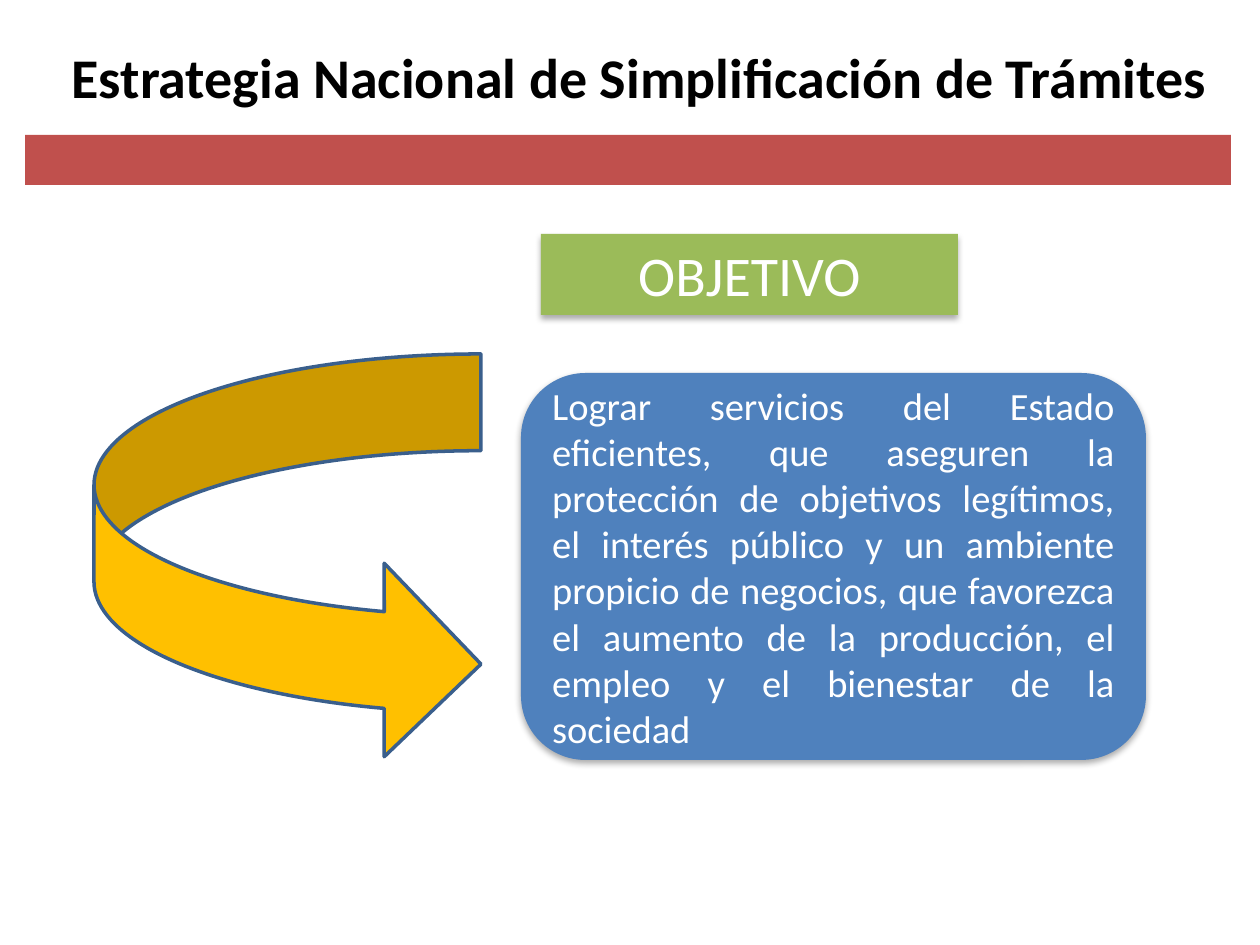
from lxml import etree
from pptx import Presentation
from pptx.dml.color import RGBColor
from pptx.enum.shapes import MSO_SHAPE as Shape
from pptx.enum.text import MSO_ANCHOR as Anchor, PP_ALIGN as Align
from pptx.oxml import parse_xml
from pptx.oxml.ns import nsdecls, qn
from pptx.util import Emu, Pt

PX = 914400 // 126
WHITE = "FFFFFF"


def color(hex_text):
    return RGBColor.from_string(hex_text)


def px(*lengths):
    return [Emu(length * PX) for length in lengths]


def write(shape, text, size, font_color, align, anchor=Anchor.MIDDLE, bold=False):
    frame = shape.text_frame
    frame.word_wrap = True
    frame.vertical_anchor = anchor
    frame.text = text
    paragraph = frame.paragraphs[0]
    paragraph.alignment = align
    font = paragraph.runs[0].font
    font.name, font.size, font.bold = "Calibri", Pt(size), bold
    font.color.rgb = color(font_color)


def add_panel(slide, kind, box, fill):
    shape = slide.shapes.add_shape(kind, *px(*box))
    shape.shadow.inherit = False
    shape.fill.solid()
    shape.fill.fore_color.rgb = color(fill)
    shape.line.fill.background()
    return shape


def drop_shadow(shape):
    effects = shape._element.spPr.find(qn("a:effectLst"))
    effects.append(parse_xml(
        f'<a:outerShdw {nsdecls("a")} blurRad="{Pt(3.5)}" dist="{Pt(2.2)}" '
        'dir="5400000" rotWithShape="0"><a:srgbClr val="000000">'
        '<a:alpha val="32000"/></a:srgbClr></a:outerShdw>'))


def add_header(slide, left, top, width):
    title = slide.shapes.add_textbox(*px(left + 19, top, width - 15, 100))
    write(title, "Estrategia Nacional de Simplificación de Trámites",
          32, "000000", Align.CENTER, bold=True)
    add_panel(slide, Shape.RECTANGLE, (left, top + 109, width, 50), "C0504D")


def add_objective(slide, left, top, width, height):
    label = add_panel(slide, Shape.RECTANGLE, (left + 20, top, 417, 81), "9BBB59")
    drop_shadow(label)
    write(label, "OBJETIVO", 32, WHITE, Align.CENTER, Anchor.TOP)
    body = add_panel(slide, Shape.ROUNDED_RECTANGLE,
                     (left, top + 139, width, height - 139), "4F81BD")
    drop_shadow(body)
    write(body, "Lograr servicios del Estado eficientes, que aseguren la protección "
          "de objetivos legítimos, el interés público y un ambiente propicio de "
          "negocios, que favorezca el aumento de la producción, el empleo y el "
          "bienestar de la sociedad", 22, WHITE, Align.JUSTIFY)


def add_arrow(slide, *box):
    arrow = add_panel(slide, Shape.CURVED_RIGHT_ARROW, box, "FFC000")
    arrow.line.color.rgb = color("3A5F8C")
    arrow.line.width = Pt(2)


def main():
    presentation = Presentation()
    presentation.slide_width, presentation.slide_height = px(1260, 945)
    slide = presentation.slides.add_slide(presentation.slide_layouts[6])
    add_header(slide, 25, 26, 1206)
    add_objective(slide, 521, 234, 625, 526)
    add_arrow(slide, 94, 354, 387, 407)
    presentation.save("out.pptx")


if __name__ == "__main__":
    main()
